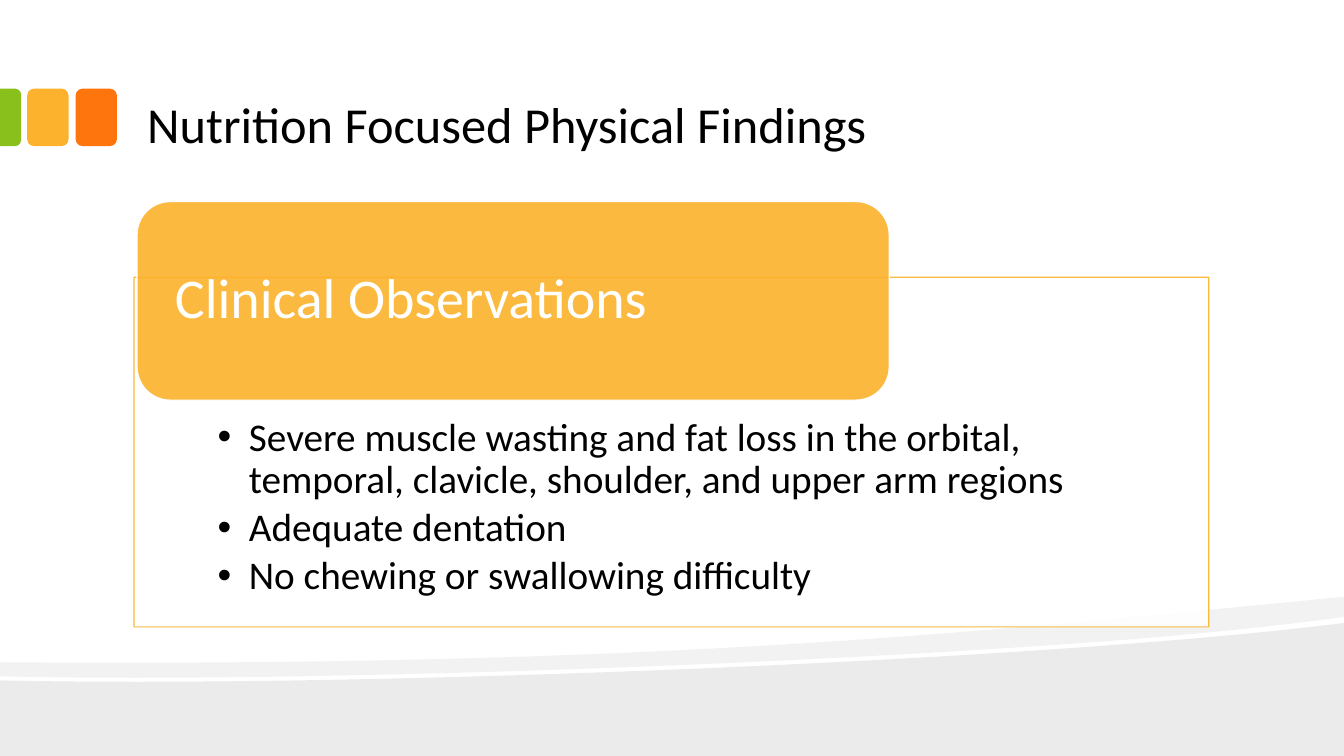
from dataclasses import dataclass

from lxml import etree
from pptx import Presentation
from pptx.dml.color import RGBColor
from pptx.enum.shapes import MSO_SHAPE
from pptx.enum.text import MSO_ANCHOR, MSO_AUTO_SIZE, PP_ALIGN
from pptx.oxml.ns import qn
from pptx.util import Inches, Pt

RECT = MSO_SHAPE.RECTANGLE
ROUNDED = MSO_SHAPE.ROUNDED_RECTANGLE
ROUNDED_TOP = MSO_SHAPE.ROUND_2_SAME_RECTANGLE
LEFT = PP_ALIGN.LEFT
TOP, MIDDLE, BOTTOM = MSO_ANCHOR.TOP, MSO_ANCHOR.MIDDLE, MSO_ANCHOR.BOTTOM
NO_AUTOFIT = MSO_AUTO_SIZE.NONE

Point = tuple[float, float]
Segment = tuple[Point, ...]
Box = tuple[float, float, float, float]


@dataclass(frozen=True)
class Theme:
    font: str = "Calibri"
    bullet_font: str = "Arial"
    black: str = "000000"
    white: str = "FFFFFF"
    green: str = "89C01C"
    amber: str = "FCB22C"
    orange: str = "FE750E"
    title_size: int = 36
    heading_size: int = 40
    body_size: int = 28
    line_width: float = 0.85


THEME = Theme()


@dataclass(frozen=True)
class Panel:
    kind: int
    box: Box
    fill: str
    opacity: int = 100
    line: str | None = None
    line_opacity: int = 100
    rotation: int = 0
    adjustments: tuple[float, ...] = ()


@dataclass(frozen=True)
class TextStyle:
    size: int
    color: str
    anchor: int
    insets: Box
    line_spacing: float = 1.0
    space_after: float = 0
    bullet_indent: float = 0


@dataclass(frozen=True)
class Contour:
    start: Point
    segments: tuple[Segment, ...]


@dataclass(frozen=True)
class Wave:
    contours: tuple[Contour, ...]
    opacity: int


TABS = [
    Panel(ROUNDED, (0.75, 0.88, 0.41, 0.57), THEME.orange),
    Panel(ROUNDED, (0.27, 0.88, 0.41, 0.57), THEME.amber),
    Panel(ROUNDED_TOP, (-0.18, 1.06, 0.57, 0.21), THEME.green,
          rotation=90, adjustments=(0.29, 0)),
]
BODY_PANEL = Panel(RECT, (1.33, 2.75, 10.66, 3.47), THEME.white, 90, THEME.amber, 90)
HEADING_PANEL = Panel(ROUNDED, (1.36, 2, 7.46, 1.97), THEME.amber, 90, THEME.white)

TITLE_STYLE = TextStyle(THEME.title_size, THEME.black, BOTTOM, (0.13, 0.07, 0.13, 0.07))
BODY_STYLE = TextStyle(THEME.body_size, THEME.black, TOP, (0.83, 1.39, 0.83, 0.22),
                       0.9, 4.2, 0.31)
HEADING_STYLE = TextStyle(THEME.heading_size, THEME.white, MIDDLE, (0.28, 0, 0.28, 0), 0.9)

FINDINGS = [
    "Severe muscle wasting and fat loss in the orbital, temporal, clavicle, "
    "shoulder, and upper arm regions",
    "Adequate dentation",
    "No chewing or swallowing difficulty",
]

WAVES = [
    Wave((Contour((13.33, 6.18), (
        ((13.33, 7.5),),
        ((0, 7.5),),
        ((0, 6.75),),
        ((3.52, 6.83), (10.42, 6.55), (13.33, 6.18)),
    )),), 8),
    Wave((
        Contour((0, 7.5), (((13.33, 7.5),),)),
        Contour((13.33, 5.92), (
            ((13.33, 6.12),),
            ((12.55, 6.23), (11.49, 6.33), (10.29, 6.41)),
            ((6.98, 6.63), (2.58, 6.77), (0, 6.71)),
            ((0, 6.57),),
            ((6.52, 6.62), (9.71, 6.27), (13.33, 5.92)),
        )),
    ), 5),
]


def set_fill(fill, color: str, opacity: int) -> None:
    fill.solid()
    fill.fore_color.rgb = RGBColor.from_string(color)
    if opacity < 100:
        srgb = fill._xPr.find(qn("a:solidFill")).find(qn("a:srgbClr"))
        etree.SubElement(srgb, qn("a:alpha")).set("val", str(opacity * 1000))


def to_emu(point: Point) -> tuple[int, int]:
    return Inches(point[0]), Inches(point[1])


def add_wave(s, wave: Wave) -> None:
    builder = s.shapes.build_freeform(*to_emu(wave.contours[0].start))
    for i, contour in enumerate(wave.contours):
        if i:
            builder.move_to(*to_emu(contour.start))
        builder.add_line_segments([to_emu(seg[-1]) for seg in contour.segments], close=True)
    sp = builder.convert_to_shape()
    segments = [seg for contour in wave.contours for seg in contour.segments]
    for edge, segment in zip(list(sp._element.iter(qn("a:lnTo"))), segments):
        if len(segment) == 3:
            edge.tag = qn("a:cubicBezTo")
            for i, control in enumerate(segment[:2]):
                x, y = to_emu(control)
                pt = etree.Element(qn("a:pt"), x=str(x - sp.left), y=str(y - sp.top))
                edge.insert(i, pt)
    sp.shadow.inherit = False
    set_fill(sp.fill, THEME.black, wave.opacity)
    sp.line.fill.background()


def add_panel(s, panel: Panel):
    sp = s.shapes.add_shape(panel.kind, *map(Inches, panel.box))
    sp.shadow.inherit = False
    sp.rotation = panel.rotation
    for i, value in enumerate(panel.adjustments):
        sp.adjustments[i] = value
    set_fill(sp.fill, panel.fill, panel.opacity)
    if panel.line:
        set_fill(sp.line.fill, panel.line, panel.line_opacity)
        sp.line.width = Pt(THEME.line_width)
    else:
        sp.line.fill.background()
    return sp


def write_text(sp, lines: list[str], style: TextStyle) -> None:
    tf = sp.text_frame
    tf.word_wrap = True
    tf.auto_size = NO_AUTOFIT
    tf.vertical_anchor = style.anchor
    tf.margin_left, tf.margin_top, tf.margin_right, tf.margin_bottom = map(
        Inches, style.insets)
    for i, line in enumerate(lines):
        p = tf.paragraphs[0] if i == 0 else tf.add_paragraph()
        p.alignment = LEFT
        p.line_spacing = style.line_spacing
        p.space_after = Pt(style.space_after)
        if style.bullet_indent:
            indent = Inches(style.bullet_indent)
            pPr = p._p.get_or_add_pPr()
            pPr.set("marL", str(indent))
            pPr.set("indent", str(-indent))
            etree.SubElement(pPr, qn("a:buFont")).set("typeface", THEME.bullet_font)
            etree.SubElement(pPr, qn("a:buChar")).set("char", "•")
        r = p.add_run()
        r.text = line
        r.font.name = THEME.font
        r.font.size = Pt(style.size)
        r.font.color.rgb = RGBColor.from_string(style.color)


def main() -> None:
    prs = Presentation()
    prs.slide_width, prs.slide_height = Inches(13.33), Inches(7.5)
    s = prs.slides.add_slide(prs.slide_layouts[5])
    for wave in WAVES:
        add_wave(s, wave)
    for tab in TABS:
        add_panel(s, tab)
    title = s.shapes.title
    title.left, title.top, title.width, title.height = map(
        Inches, (1.33, 0.17, 10.66, 1.42))
    write_text(title, ["Nutrition Focused Physical Findings"], TITLE_STYLE)
    write_text(add_panel(s, BODY_PANEL), FINDINGS, BODY_STYLE)
    write_text(add_panel(s, HEADING_PANEL), ["Clinical Observations"], HEADING_STYLE)
    prs.save("out.pptx")


if __name__ == "__main__":
    main()
